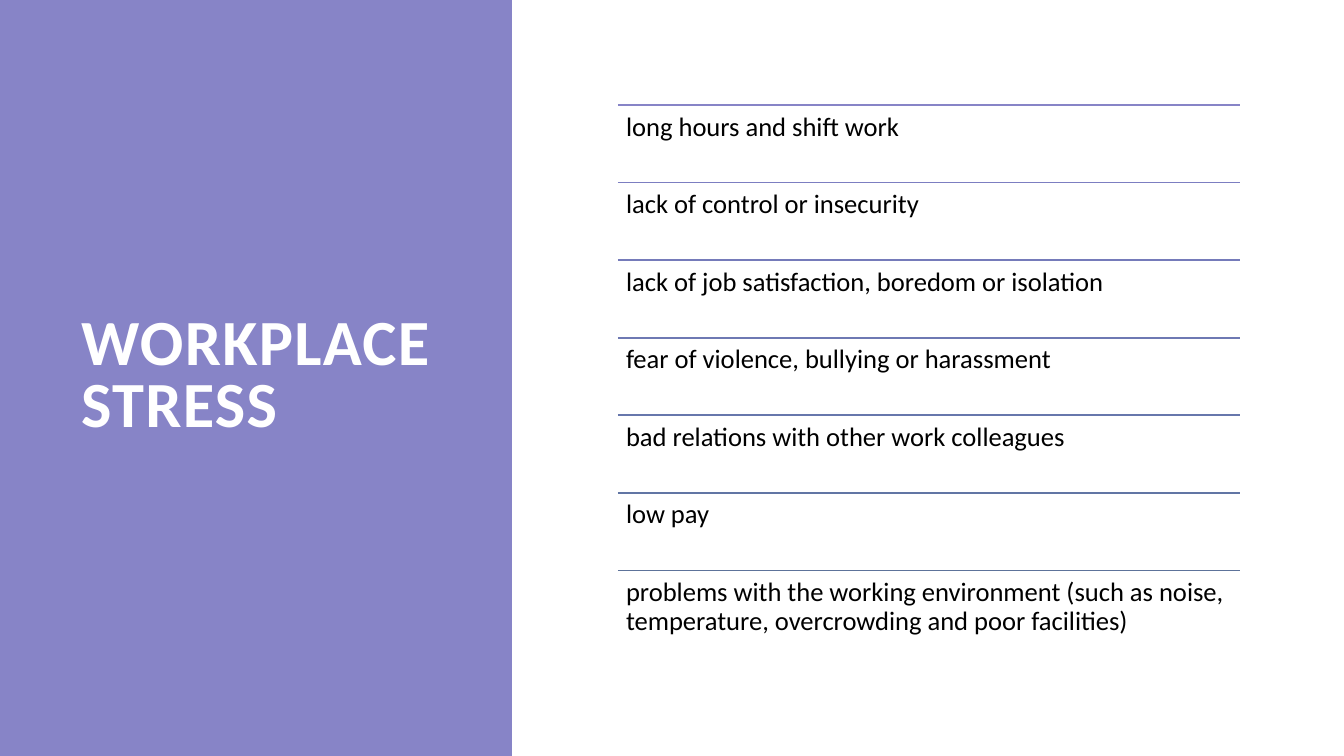
from lxml import etree
from pptx import Presentation
from pptx import util as u
from pptx.dml.color import RGBColor
from pptx.enum import shapes, text
from pptx.oxml.ns import qn

TITLE = "WORKPLACE STRESS"
CAUSES = [
    ("long hours and shift work", "8784C7"),
    ("lack of control or insecurity", "7C7EC1"),
    ("lack of job satisfaction, boredom or isolation", "757BBA"),
    ("fear of violence, bullying or harassment", "6E79B3"),
    ("bad relations with other work colleagues", "6777AC"),
    ("low pay", "6175A4"),
    ("problems with the working environment (such as noise, "
     "temperature, overcrowding and poor facilities)", "5D739A"),
]
SLIDE_W, SLIDE_H = 1344, 756
PANEL = (0, 0, 512, SLIDE_H)
PANEL_COLOR = "8784C7"
TITLE_BOX = (71, 71, 377, 614)
LIST_X, LIST_Y, LIST_W, LIST_H = 618, 105, 622, 543
INSET = 8

TITLE_FONT = {"name": "Calibri", "size": u.Pt(46), "bold": True}
CAUSE_FONT = {"name": "Calibri", "size": u.Pt(19), "bold": False}
TITLE_PARA = {"alignment": text.PP_ALIGN.LEFT, "line_spacing": 0.8}
CAUSE_PARA = {"alignment": text.PP_ALIGN.LEFT, "line_spacing": 0.9,
              "space_after": u.Pt(6.65)}
TITLE_FRAME = {"word_wrap": True, "auto_size": text.MSO_AUTO_SIZE.NONE,
               "vertical_anchor": text.MSO_ANCHOR.MIDDLE}
CAUSE_FRAME = {"word_wrap": True, "vertical_anchor": text.MSO_ANCHOR.TOP,
               **{f"margin_{side}": u.Inches(INSET / 100)
                  for side in ("left", "top", "right", "bottom")}}


def px(n):
    return round(n * 914400 / 100.8)


def rgb(color):
    return RGBColor.from_string(color)


def apply(obj, values):
    for name, value in values.items():
        setattr(obj, name, value)


def write(sp, words, frame, para, font, color):
    tf = sp.text_frame
    apply(tf, frame)
    p = tf.paragraphs[0]
    apply(p, para)
    r = p.add_run()
    r.text = words
    apply(r.font, font)
    r.font.color.rgb = rgb(color)
    return r


def add_panel(s):
    sp = s.shapes.add_shape(shapes.MSO_SHAPE.RECTANGLE, *map(px, PANEL))
    sp.shadow.inherit = False
    sp.fill.solid()
    sp.fill.fore_color.rgb = rgb(PANEL_COLOR)
    sp.line.fill.background()
    s.shapes._spTree.insert(2, sp._element)


def add_title(s):
    sp = s.shapes.title
    apply(sp, dict(zip(("left", "top", "width", "height"), map(px, TITLE_BOX))))
    r = write(sp, TITLE, TITLE_FRAME, TITLE_PARA, TITLE_FONT, "FFFFFF")
    r.font._element.set("spc", "100")


def add_causes(s):
    group = s.shapes.add_group_shape().shapes
    row_h = LIST_H / len(CAUSES)
    for i, (words, color) in enumerate(CAUSES):
        y = LIST_Y + i * row_h
        line = group.add_connector(
            shapes.MSO_CONNECTOR.STRAIGHT,
            px(LIST_X), px(y), px(LIST_X + LIST_W), px(y))
        line.line.color.rgb = rgb(color)
        line.line.width = u.Pt(1.25)
        etree.SubElement(line._element.spPr, qn("a:effectLst"))
        box = group.add_textbox(px(LIST_X), px(y), px(LIST_W), px(row_h))
        write(box, words, CAUSE_FRAME, CAUSE_PARA, CAUSE_FONT, "000000")


def main():
    prs = Presentation()
    prs.slide_width, prs.slide_height = px(SLIDE_W), px(SLIDE_H)
    s = prs.slides.add_slide(prs.slide_layouts[5])
    add_panel(s)
    add_title(s)
    add_causes(s)
    prs.save("out.pptx")


if __name__ == "__main__":
    main()
